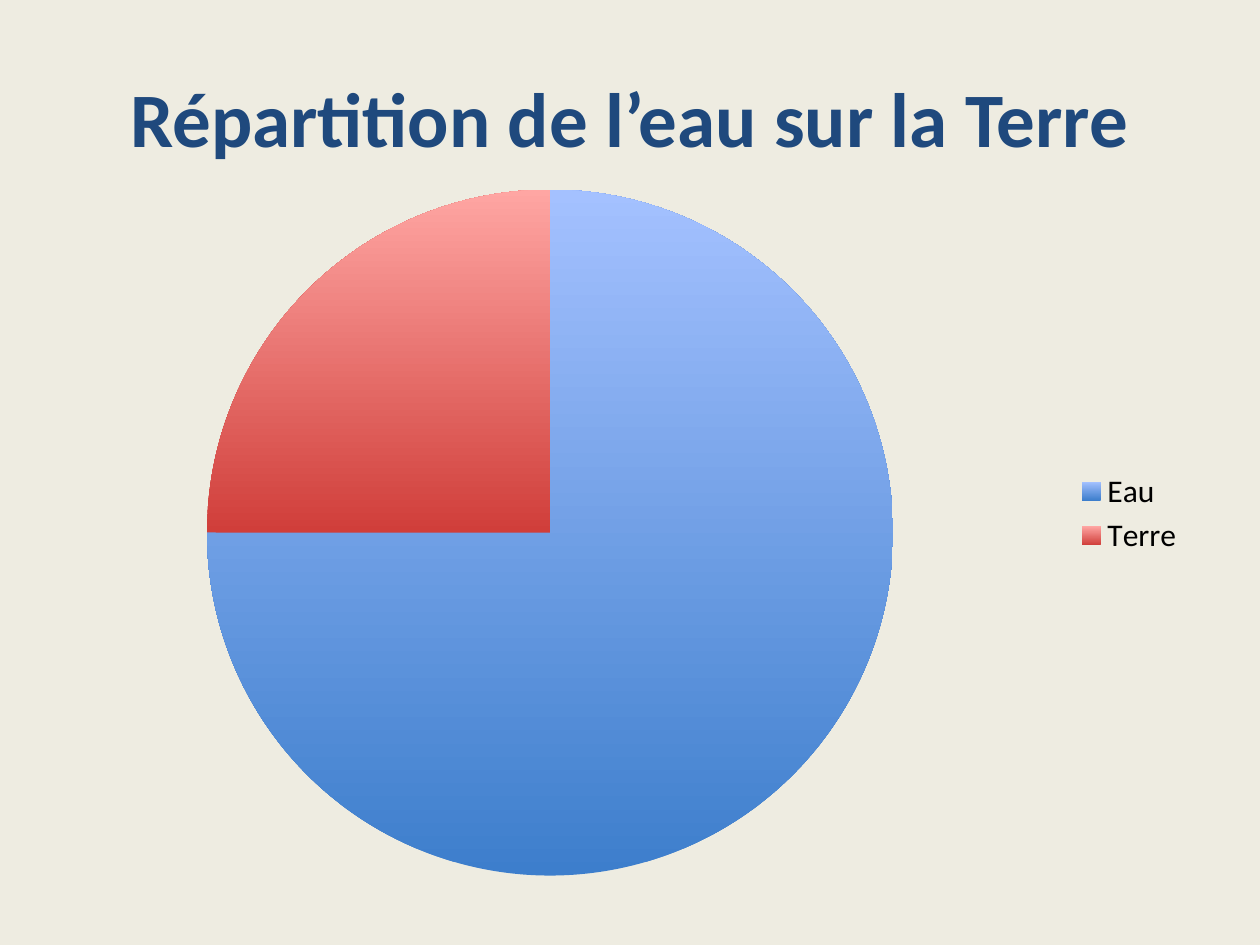
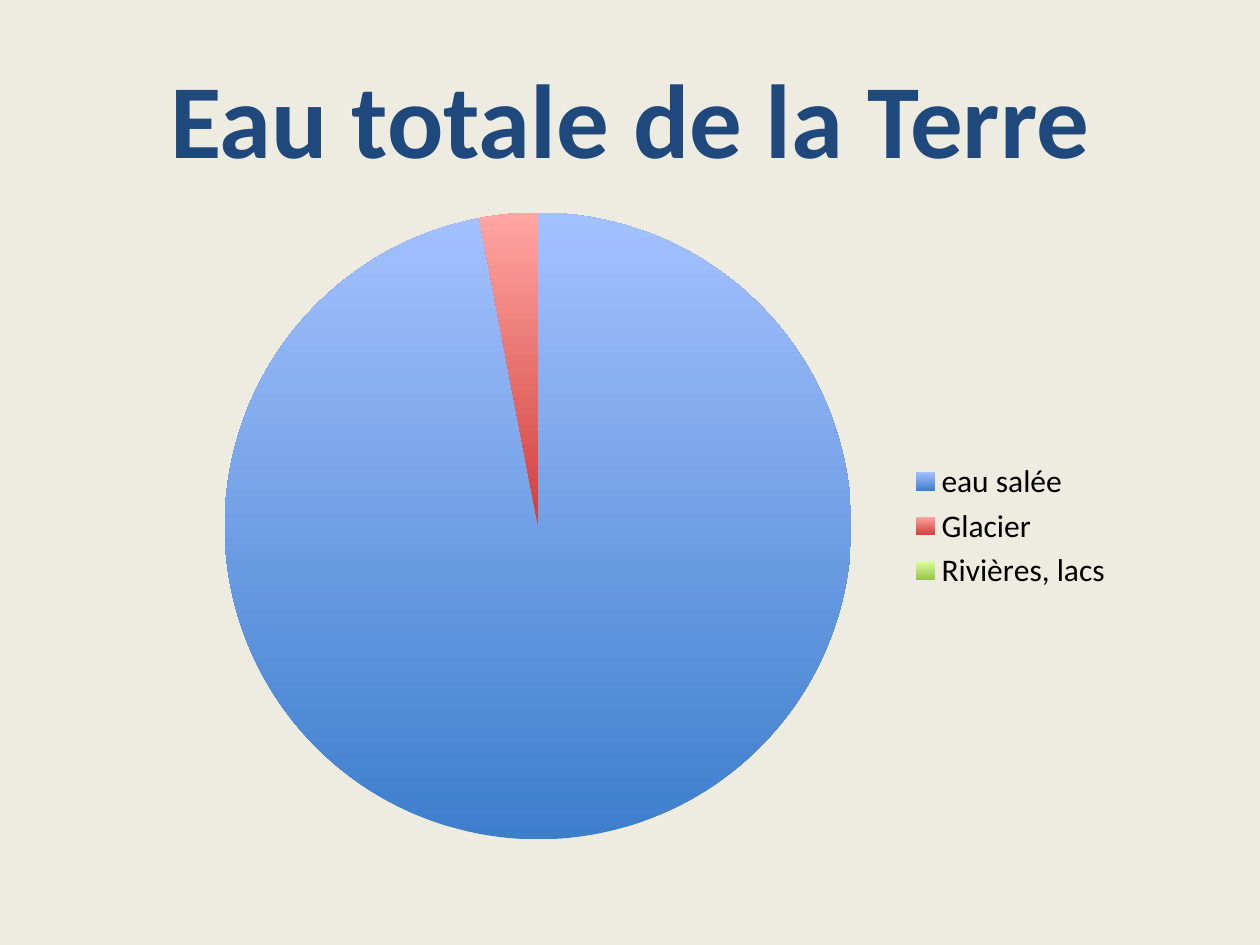
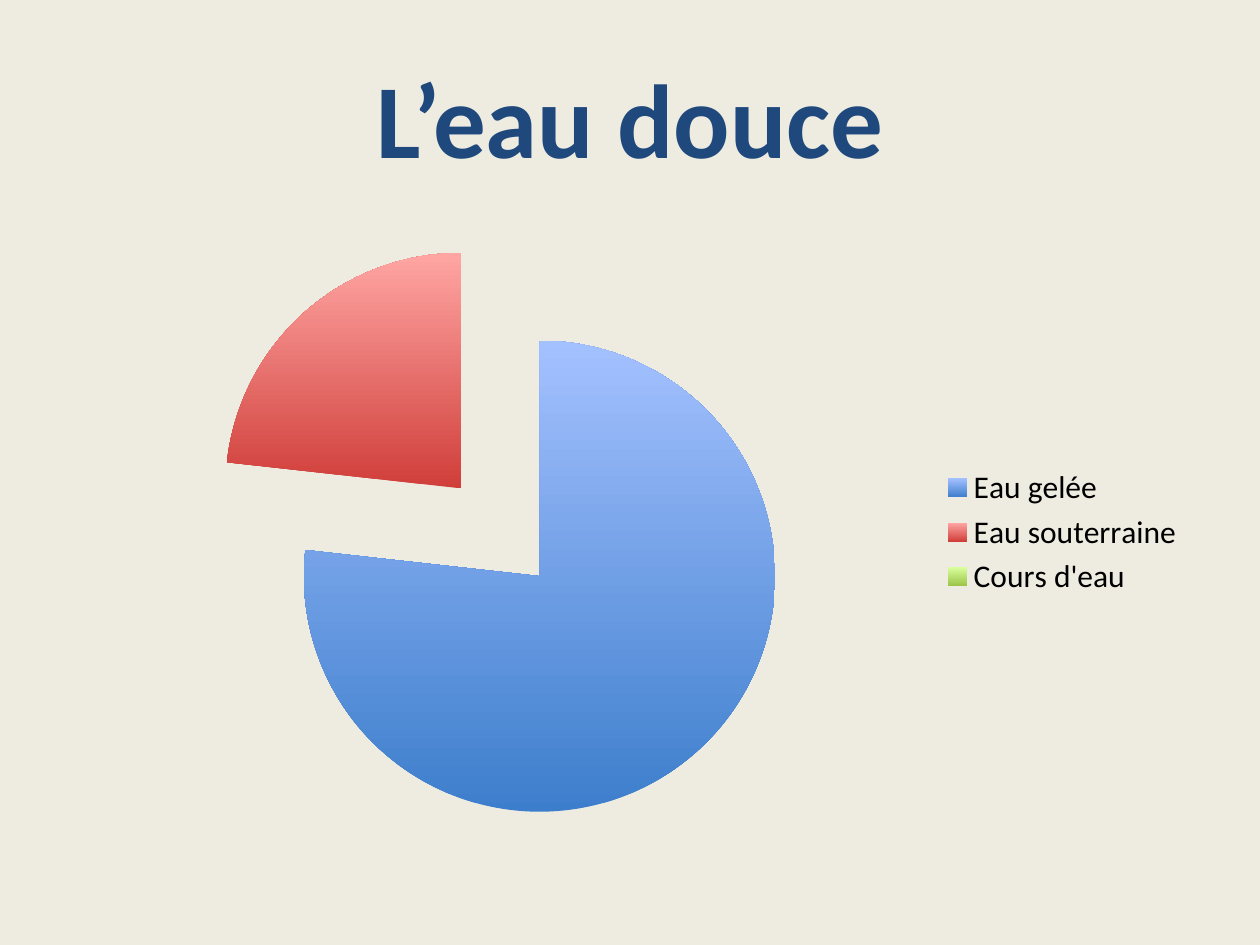
from lxml import etree
from pptx import Presentation
from pptx.chart.data import CategoryChartData as Data
from pptx.dml.color import RGBColor as RGB
from pptx.enum.chart import XL_CHART_TYPE as Kind, XL_LEGEND_POSITION as Side
from pptx.enum.text import MSO_ANCHOR as Anchor, PP_ALIGN as Align
from pptx.oxml.ns import qn
from pptx.util import Inches, Pt

CREAM = RGB(0xEE, 0xEC, 0xE1)
NAVY = RGB(0x1F, 0x49, 0x7D)
BLACK = RGB(0, 0, 0)
# Bottom and top colour of each slice
SHADES = [
    (RGB(0x3D, 0x7E, 0xCC), RGB(0xA4, 0xC1, 0xFF)),
    (RGB(0xD0, 0x3E, 0x3A), RGB(0xFF, 0xA6, 0xA3)),
    (RGB(0x9B, 0xC4, 0x48), RGB(0xD8, 0xFF, 0x9C)),
]
FONT = "Calibri"
CELL = 0.05  # grid step in inches


def grid(*cells):
    return [Inches(n * CELL) for n in cells]


def add_title(slide, text, size):
    title = slide.shapes.title
    title.left, title.top, title.width, title.height = grid(10, 6, 180, 25)
    frame = title.text_frame
    frame.vertical_anchor = Anchor.MIDDLE
    para = frame.paragraphs[0]
    para.alignment = Align.CENTER
    run = para.add_run()
    run.text = text
    font = run.font
    font.name, font.size, font.bold = FONT, Pt(size), True
    font.color.rgb = NAVY


def set_plot(chart, *shares):
    """Fix the inner plot area, given in percent of the chart."""
    area = chart.plots[0]._element.getparent()
    for old in area.findall(qn("c:layout")):
        area.remove(old)
    layout = etree.Element(qn("c:layout"))
    area.insert(0, layout)
    manual = etree.SubElement(layout, qn("c:manualLayout"))
    parts = [("layoutTarget", "inner"), ("xMode", "edge"), ("yMode", "edge")]
    parts += [(tag, share / 100) for tag, share in zip("xywh", shares)]
    for tag, val in parts:
        etree.SubElement(manual, qn("c:" + tag)).set("val", str(val))


def explode(series, share):
    """Move all slices outwards by a percentage of the radius."""
    node = etree.Element(qn("c:explosion"))
    node.set("val", str(share))
    series._element.find(qn("c:dPt")).addprevious(node)


def add_pie(slide, cells, values):
    data = Data()
    data.categories = values.keys()
    data.add_series("Series 1", values.values())
    chart = slide.shapes.add_chart(Kind.PIE, *grid(*cells), data).chart
    chart.font.name, chart.font.size = FONT, Pt(18)
    chart.font.color.rgb = BLACK
    chart.has_title = False
    chart.has_legend = True
    chart.legend.position = Side.RIGHT
    chart.legend.include_in_layout = False
    plot = chart.plots[0]
    plot.vary_by_categories = True
    for i, shades in enumerate(SHADES[:len(values)]):
        style = plot.series[0].points[i].format
        style.line.fill.background()
        style.fill.gradient()
        style.fill.gradient_angle = 90
        for stop, shade in zip(style.fill.gradient_stops, shades):
            stop.color.rgb = shade
    return chart


def main():
    prs = Presentation()
    prs.slide_width, prs.slide_height = Inches(10), Inches(7.5)
    back = prs.slide_master.background.fill
    back.solid()
    back.fore_color.rgb = CREAM

    def add_page(title, size, cells, values):
        slide = prs.slides.add_slide(prs.slide_layouts.get_by_name("Title Only"))
        add_title(slide, title, size)
        return add_pie(slide, cells, values)

    globe = add_page("Répartition de l’eau sur la Terre", 44,
                     (10, 24, 180, 115), {"Eau": 75, "Terre": 25})
    set_plot(globe, 0, 5.3, 85.9, 94.7)

    add_page("Eau totale de la Terre", 60, (27.1, 31, 151.6, 105),
             {"eau salée": 97, "Glacier": 3, "Rivières, lacs": 0})

    fresh = add_page("L’eau douce", 60, (10, 35, 180, 99),
                     {"Eau gelée": 76, "Eau souterraine": 23, "Cours d'eau": 0})
    explode(fresh.plots[0].series[0], 25)

    prs.save("out.pptx")


if __name__ == "__main__":
    main()
